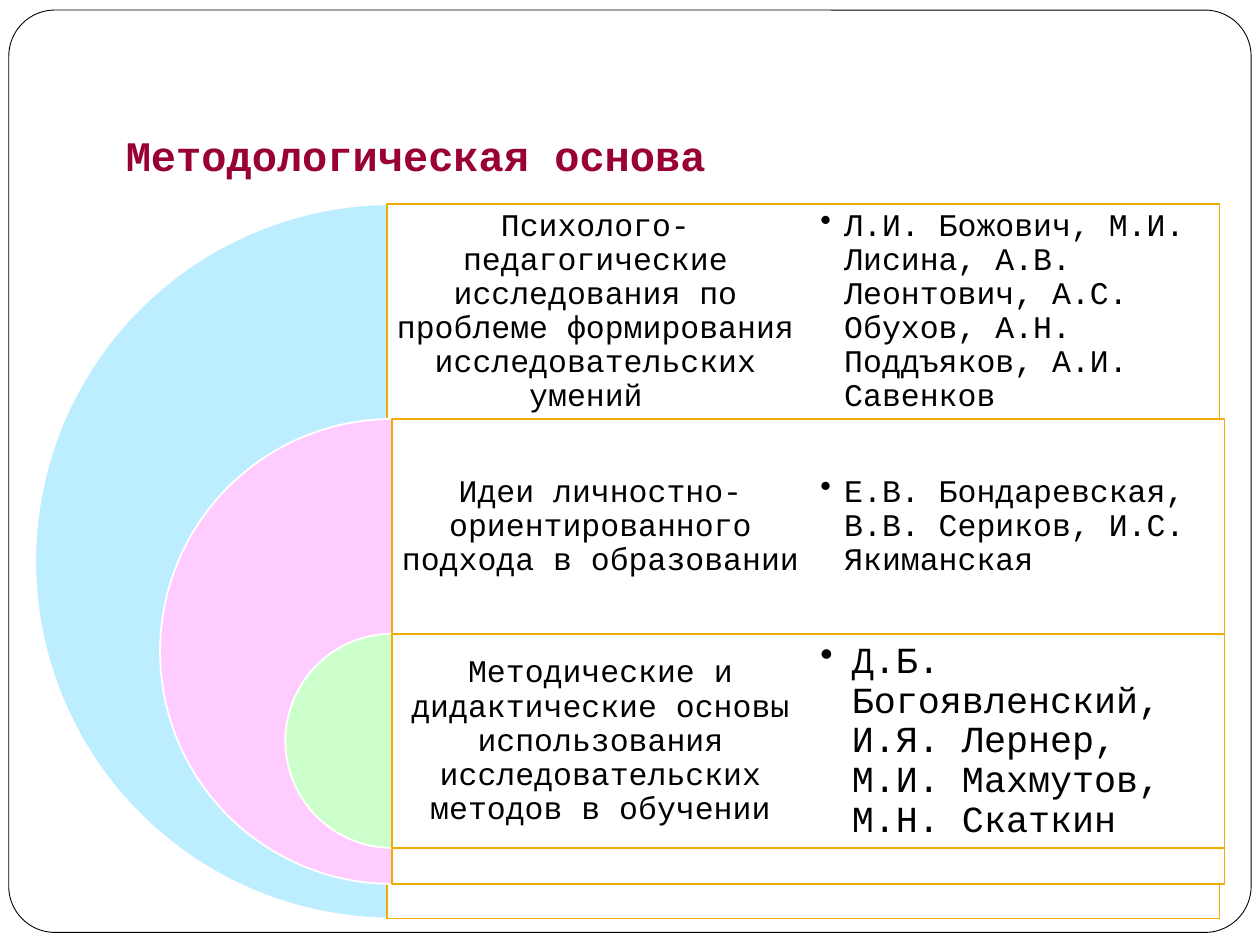
from lxml import etree
from pptx import Presentation
from pptx.dml.color import RGBColor
from pptx.enum.shapes import MSO_SHAPE
from pptx.enum.text import MSO_ANCHOR, PP_ALIGN
from pptx.oxml.ns import qn
from pptx.util import Inches, Pt

ROUND, PIE, RECT = MSO_SHAPE.ROUNDED_RECTANGLE, MSO_SHAPE.PIE, MSO_SHAPE.RECTANGLE
MIDDLE, BOTTOM = MSO_ANCHOR.MIDDLE, MSO_ANCHOR.BOTTOM
LEFT, CENTER = PP_ALIGN.LEFT, PP_ALIGN.CENTER
FONT = "Courier New"
TOP, STEP, AXIS = 1.62, 1.705, 3.115
WIDE, HALF, ROW = 6.61, 3.31, 1.7
NAMES = 6.42

ROWS = [
    (5.67, 3.07, "BDEEFF",
     "Психолого-педагогические исследования по проблеме формирования исследовательских умений ",
     "Л.И. Божович, М.И. Лисина, А.В. Леонтович, А.С. Обухов, А.Н. Поддъяков, А.И. Савенков",
     18, 0.19),
    (3.69, 3.11, "FFCCFF",
     "Идеи личностно- ориентированного подхода в образовании ",
     "Е.В. Бондаревская, В.В. Сериков, И.С. Якиманская",
     18, 0.19),
    (1.7, 3.11, "CCFFCC",
     "Методические и дидактические основы использования исследовательских методов в обучении",
     "Д.Б. Богоявленский, И.Я. Лернер, М.И. Махмутов, М.Н. Скаткин",
     21, 0.25),
]


def color(code):
    return RGBColor.from_string(code)


def apply(item, values):
    for name, value in values.items():
        setattr(item, name, value)


def add_form(slide, kind, box, fill, line, width=1, turns=()):
    shape = slide.shapes.add_shape(kind, *map(Inches, box))
    shape.shadow.inherit = False
    shape.fill.solid()
    shape.fill.fore_color.rgb = color(fill)
    shape.line.color.rgb = color(line)
    shape.line.width = Pt(width)
    for i, turn in enumerate(turns):
        shape.adjustments[i] = turn
    return shape


def fade(shape, percent):
    tint = shape._element.spPr.find(qn("a:solidFill"))[0]
    etree.SubElement(tint, qn("a:alpha")).set("val", str(percent * 1000))


def add_text(slide, box, text, font, para, anchor=MIDDLE, inset=0.07, base=None):
    frame = slide.shapes.add_textbox(*map(Inches, box)).text_frame
    apply(frame, {
        "word_wrap": True, "vertical_anchor": anchor,
        "margin_left": Inches(inset), "margin_right": Inches(inset),
        "margin_top": Inches(inset if base is None else 0.05),
        "margin_bottom": Inches(inset if base is None else base),
    })
    line = frame.paragraphs[0]
    apply(line, para)
    run = line.add_run()
    run.text = text
    apply(run.font, {"name": FONT, **font})
    run.font.color.rgb = color("990033" if font.get("bold") else "000000")
    return line


def add_bullet(line, indent):
    props = line._p.get_or_add_pPr()
    props.set("marL", str(Inches(indent)))
    props.set("indent", str(-Inches(indent)))
    etree.SubElement(props, qn("a:buChar")).set("char", "•")


def add_row(slide, index, row):
    size, left, fill, topic, names, points, indent = row
    top = TOP + STEP * index
    add_form(slide, PIE, (AXIS - size / 2, top, size, size), fill, "FFFFFF",
             turns=(54, 162))
    fade(add_form(slide, RECT, (left, top, WIDE, size), "FFFFFF", "F0AD00"), 90)
    add_text(slide, (left, top, HALF, ROW), topic, {"size": Pt(18)},
             {"alignment": CENTER, "line_spacing": 0.9, "space_after": Pt(6)})
    line = add_text(slide, (NAMES, top, HALF, ROW), names, {"size": Pt(points)},
                    {"alignment": LEFT, "line_spacing": 0.9, "space_after": Pt(3)},
                    inset=0.09)
    add_bullet(line, indent)


def main():
    deck = Presentation()
    apply(deck, {"slide_width": Inches(10), "slide_height": Inches(7.5)})
    slide = deck.slides.add_slide(deck.slide_layouts[6])
    add_form(slide, ROUND, (0.07, 0.08, 9.86, 7.32), "FFFFFF", "000000", 0.5, (0.05,))
    add_text(slide, (0.9, 0.28, 8.5, 1.25), "Методологическая основа",
             {"size": Pt(24), "bold": True}, {"alignment": LEFT},
             BOTTOM, 0.1, 0.1)
    for index, row in enumerate(ROWS):
        add_row(slide, index, row)
    deck.save("out.pptx")


if __name__ == "__main__":
    main()
